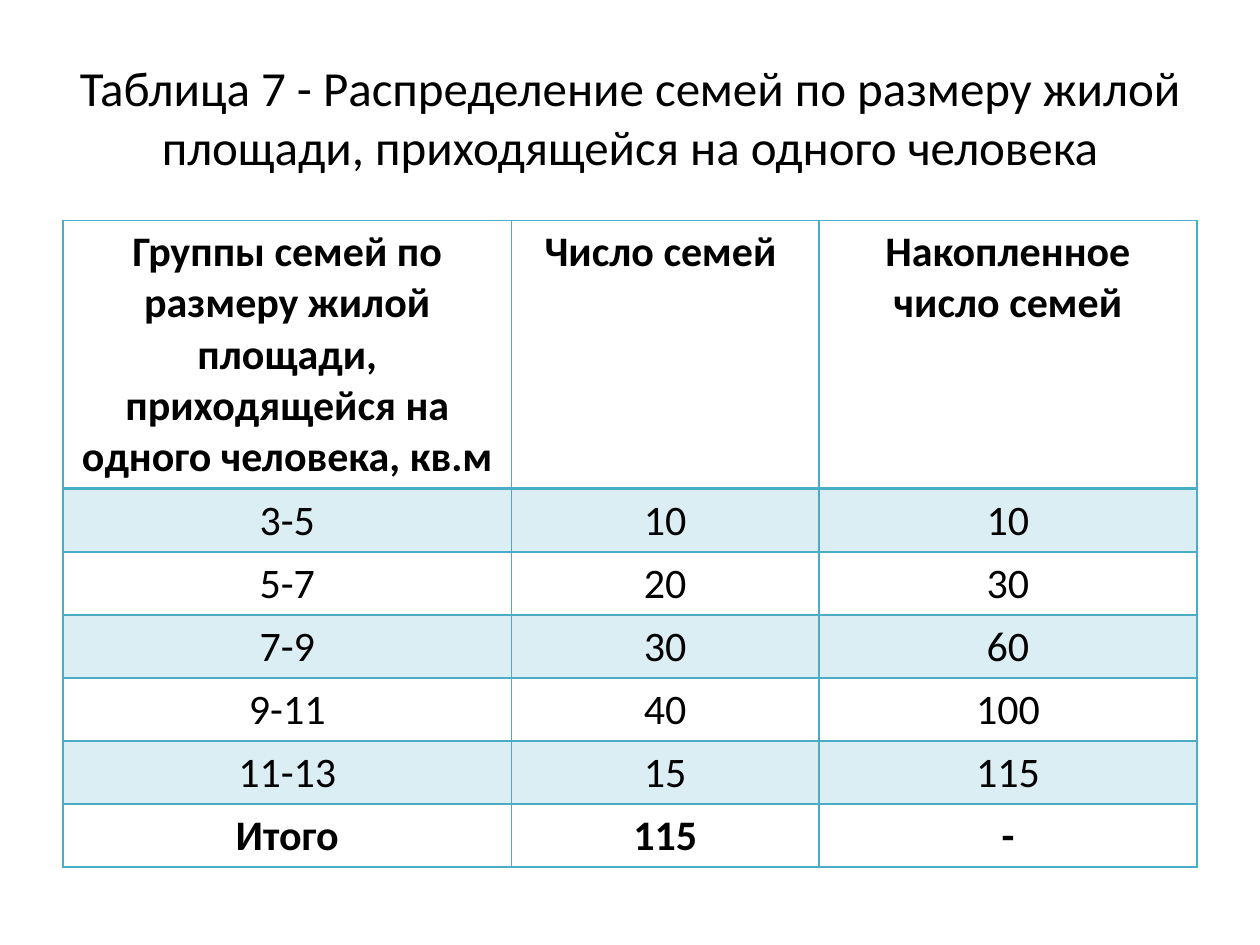
from typing import NamedTuple

from lxml import etree
from pptx import Presentation
from pptx import util as u
from pptx.dml.color import RGBColor
from pptx.enum import text
from pptx.oxml.ns import qn

COLORS = {"text": "000000", "accent": "4BACC6"}
FONT = "Calibri"
TITLE = "Таблица 7 - Распределение семей по размеру жилой площади, приходящейся на одного человека"
COLUMN_WIDTHS = (3.56, 2.44, 3)
HEADER_HEIGHT = 2.13
ROW_HEIGHT = 0.5
BAND_OPACITY = 20


class Row(NamedTuple):
    values: tuple[str, str, str]
    bold: bool = False
    banded: bool = False


ROWS = (
    Row(("Группы семей по размеру жилой площади, приходящейся на одного человека, кв.м",
         "Число семей ", "Накопленное число семей"), bold=True),
    Row(("3-5", "10", "10"), banded=True),
    Row(("5-7", "20", "30")),
    Row(("7-9", "30", "60"), banded=True),
    Row(("9-11", "40", "100")),
    Row(("11-13", "15", "115"), banded=True),
    Row(("Итого", "115", "-"), bold=True),
)


def write_text(text_frame, content: str, size: float, bold: bool = False) -> None:
    text_frame.text = content
    paragraph = text_frame.paragraphs[0]
    paragraph.alignment = text.PP_ALIGN.CENTER
    font = paragraph.runs[0].font
    font.name = FONT
    font.size = u.Pt(size)
    font.bold = bold
    font.color.rgb = RGBColor.from_string(COLORS["text"])


def add_border(cell, side: str, width: float) -> None:
    properties = cell._tc.get_or_add_tcPr()
    line = etree.SubElement(properties, qn(f"a:ln{side}"), w=str(u.Pt(width)))
    fill = etree.SubElement(line, qn("a:solidFill"))
    etree.SubElement(fill, qn("a:srgbClr"), val=COLORS["accent"])


def fill_cell(cell, banded: bool) -> None:
    if not banded:
        cell.fill.background()
        return
    cell.fill.solid()
    cell.fill.fore_color.rgb = RGBColor.from_string(COLORS["accent"])
    color = cell._tc.tcPr.find(qn("a:solidFill")).find(qn("a:srgbClr"))
    etree.SubElement(color, qn("a:alpha"), val=str(BAND_OPACITY * 1000))


def add_title(slide) -> None:
    shape = slide.shapes.add_textbox(u.Inches(0.5), u.Inches(0.3), u.Inches(9), u.Inches(1.25))
    shape.text_frame.word_wrap = True
    shape.text_frame.vertical_anchor = text.MSO_ANCHOR.MIDDLE
    write_text(shape.text_frame, TITLE, 28)


def add_family_table(slide) -> None:
    height = HEADER_HEIGHT + ROW_HEIGHT * (len(ROWS) - 1)
    table = slide.shapes.add_table(
        len(ROWS), len(COLUMN_WIDTHS), u.Inches(0.5), u.Inches(1.75),
        u.Inches(sum(COLUMN_WIDTHS)), u.Inches(height)).table
    table.first_row = False
    table.horz_banding = False
    for column, width in zip(table.columns, COLUMN_WIDTHS):
        column.width = u.Inches(width)
    for index, row in enumerate(ROWS):
        table.rows[index].height = u.Inches(ROW_HEIGHT if index else HEADER_HEIGHT)
        widths = {"L": 1, "R": 1, "T": 2 if index == 1 else 1, "B": 1 if index else 2}
        for cell, value in zip(table.rows[index].cells, row.values):
            write_text(cell.text_frame, value, 24, row.bold)
            for side, width in widths.items():
                add_border(cell, side, width)
            fill_cell(cell, row.banded)


def main() -> None:
    presentation = Presentation()
    presentation.slide_width = u.Inches(10)
    presentation.slide_height = u.Inches(7.5)
    slide = presentation.slides.add_slide(presentation.slide_layouts[6])
    add_title(slide)
    add_family_table(slide)
    presentation.save("out.pptx")


if __name__ == "__main__":
    main()
